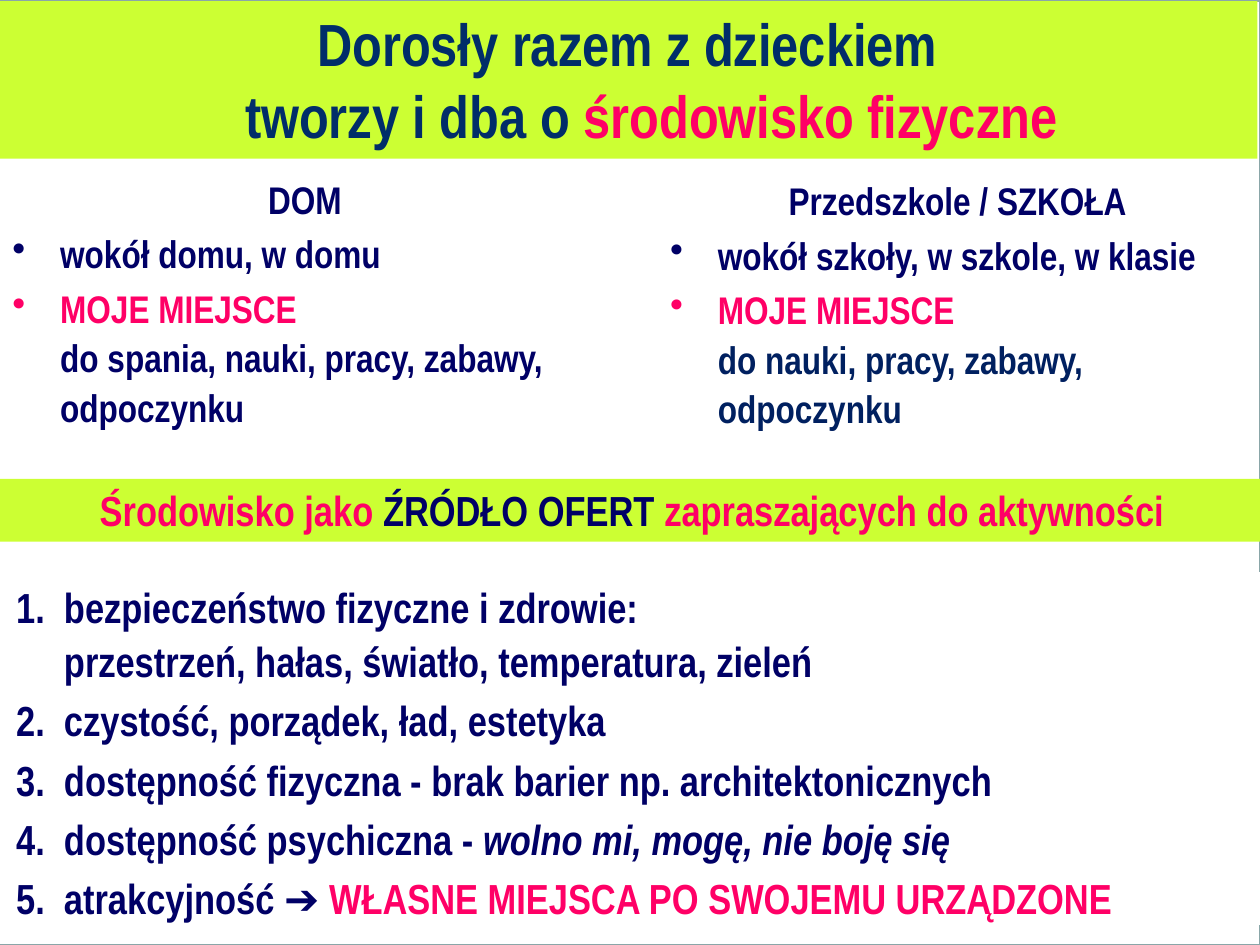
from dataclasses import dataclass

from lxml.etree import SubElement
from pptx import Presentation
from pptx.dml.color import RGBColor
from pptx.enum.shapes import MSO_SHAPE
from pptx.enum.text import MSO_ANCHOR, PP_ALIGN
from pptx.oxml.ns import qn
from pptx.util import Inches, Pt


@dataclass(frozen=True)
class Theme:
    font: str = "Arial Narrow"
    navy: str = "000066"
    title_navy: str = "002D69"
    deep_blue: str = "002060"
    pink: str = "FF0066"
    lime: str = "CCFF33"
    white: str = "FFFFFF"
    frame: str = "8AA6A8"
    title_size: int = 34
    list_size: int = 24
    column_size: int = 22
    line_spacing: float = 1.07
    space_after: int = 3
    indent: float = 0.38


THEME = Theme()
DOT = ("a:buChar", {"char": "•"})
NUMBER = ("a:buAutoNum", {"type": "arabicPeriod"})


def add_panel(page, box, fill=None, line=None):
    panel = page.shapes.add_shape(MSO_SHAPE.RECTANGLE, *map(Inches, box))
    panel.shadow.inherit = False
    if fill:
        panel.fill.solid()
        panel.fill.fore_color.rgb = RGBColor.from_string(fill)
    else:
        panel.fill.background()
    if line:
        panel.line.color.rgb = RGBColor.from_string(line)
        panel.line.width = Pt(1)
    else:
        panel.line.fill.background()
    panel.text_frame.word_wrap = True
    panel.text_frame.vertical_anchor = MSO_ANCHOR.TOP
    return panel


def add_text(para, text, size, color, italic=False):
    """Add text to a paragraph; each newline becomes a line break."""
    for index, part in enumerate(text.split("\n")):
        if index:
            para.add_line_break()
        if part:
            span = para.add_run()
            span.text = part
            font = span.font
            font.name, font.size = THEME.font, Pt(size)
            font.bold, font.italic = True, italic
            font.color.rgb = RGBColor.from_string(color)


def add_para(frame, spans, size, align=PP_ALIGN.LEFT, bullet=None,
             hanging=False, spaced=True):
    """Fill the first empty paragraph or append one; spans are (text, color[, italic])."""
    para = frame.paragraphs[0]
    if para.runs:
        para = frame.add_paragraph()
    para.alignment = align
    if spaced:
        para.line_spacing = THEME.line_spacing
        para.space_after = Pt(THEME.space_after)
    properties = para._p.get_or_add_pPr()
    if bullet or hanging:
        properties.set("marL", str(Inches(THEME.indent)))
        properties.set("indent", str(-Inches(THEME.indent)))
    if bullet:
        tag, attributes = bullet
        SubElement(properties, qn(tag), attributes)
    for text, color, *italic in spans:
        add_text(para, text, size, color, *italic)


def add_banner(page, box, spans, size):
    frame = add_panel(page, box, THEME.lime).text_frame
    add_para(frame, spans, size, PP_ALIGN.CENTER, hanging=True, spaced=False)


def add_place_column(page, box, heading, surroundings, uses, uses_color):
    frame = add_panel(page, box, THEME.white).text_frame
    size = THEME.column_size
    add_para(frame, [(heading, THEME.navy)], size, PP_ALIGN.CENTER)
    add_para(frame, [(surroundings, THEME.navy)], size, bullet=DOT)
    add_para(frame, [("MOJE MIEJSCE\n", THEME.pink), (uses, uses_color)],
             size, bullet=DOT)


def add_numbered_list(page, box, items):
    frame = add_panel(page, box, THEME.white).text_frame
    for spans in items:
        add_para(frame, spans, THEME.list_size, bullet=NUMBER)


def main():
    deck = Presentation()
    deck.slide_width, deck.slide_height = Inches(10), Inches(7.5)
    page = deck.slides.add_slide(deck.slide_layouts[6])
    navy, pink = THEME.navy, THEME.pink

    add_panel(page, (-0.02, 0.01, 10.02, 7.49), line=THEME.frame)
    add_numbered_list(page, (0.03, 4.54, 9.97, 2.8), [
        [("bezpieczeństwo fizyczne i zdrowie:\n"
          "przestrzeń, hałas, światło, temperatura, zieleń", navy)],
        [("czystość, porządek, ład, estetyka", navy)],
        [("dostępność fizyczna - brak barier np. architektonicznych", navy)],
        [("dostępność psychiczna - ", navy),
         ("wolno mi, mogę, nie boję się", navy, True)],
        [("atrakcyjność ➔ ", navy),
         ("WŁASNE MIEJSCA PO SWOJEMU URZĄDZONE", pink)],
    ])
    add_place_column(page, (0, 1.32, 4.84, 2.17), "DOM", "wokół domu, w domu",
                     "do spania, nauki, pracy, zabawy, odpoczynku", navy)
    add_place_column(page, (5.22, 1.33, 4.76, 2.17), "Przedszkole / SZKOŁA",
                     "wokół szkoły, w szkole, w klasie",
                     "do nauki, pracy, zabawy, odpoczynku", THEME.deep_blue)
    add_banner(page, (-0.02, 0.01, 10, 1.25), [
        ("Dorosły razem z dzieckiem\ntworzy i dba o ", THEME.title_navy),
        ("środowisko fizyczne", pink),
    ], THEME.title_size)
    add_banner(page, (0, 3.8, 10.03, 0.5), [
        ("Środowisko jako ", pink),
        ("ŹRÓDŁO OFERT ", navy),
        ("zapraszających do aktywności", pink),
    ], THEME.list_size)
    deck.save("out.pptx")


if __name__ == "__main__":
    main()
